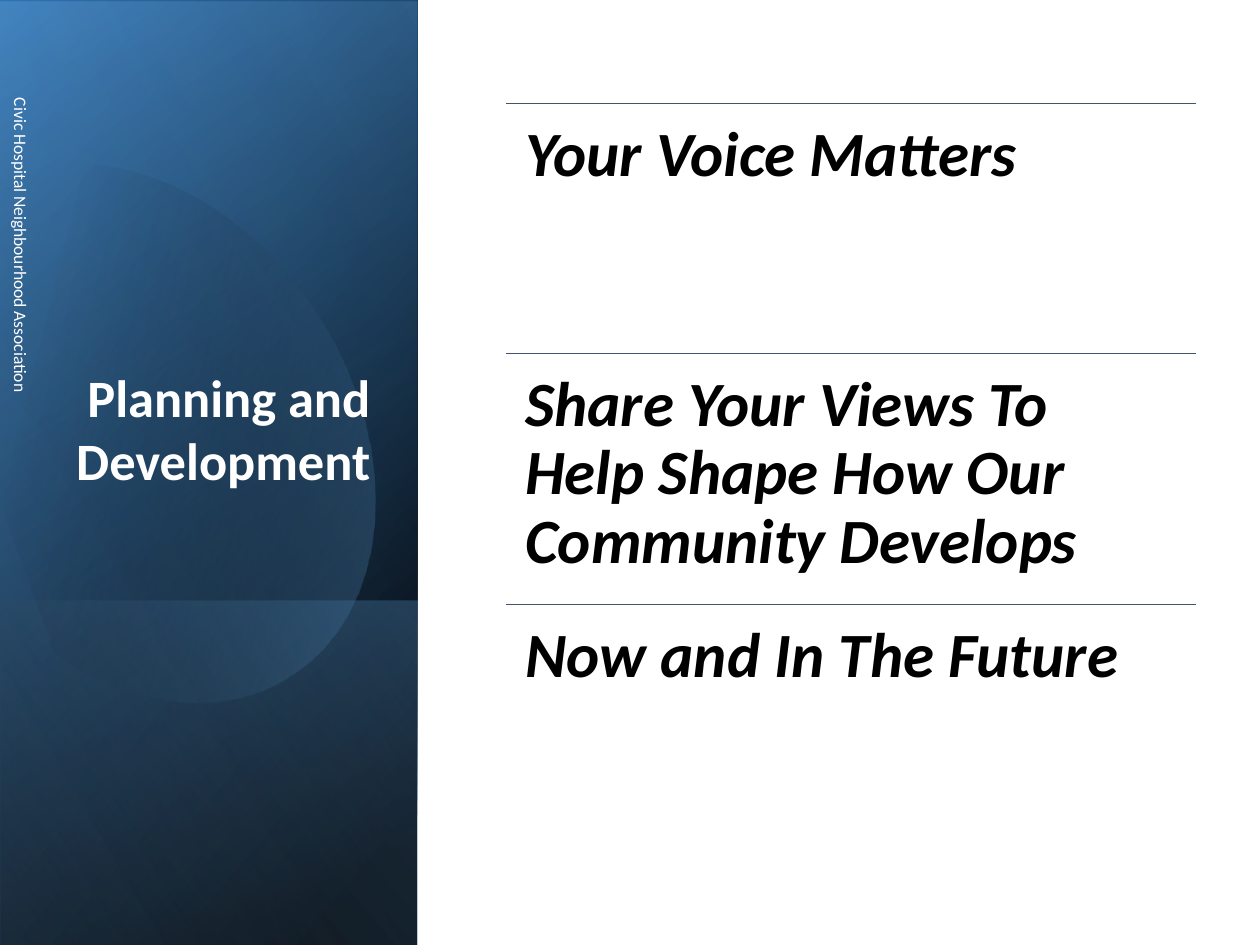
from lxml import etree
from pptx import Presentation
from pptx.dml.color import RGBColor
from pptx.enum.shapes import MSO_CONNECTOR, MSO_SHAPE
from pptx.enum.text import MSO_ANCHOR, MSO_AUTO_SIZE, PP_ALIGN
from pptx.oxml.ns import qn
from pptx.util import Cm, Pt

RECT, STRAIGHT = MSO_SHAPE.RECTANGLE, MSO_CONNECTOR.STRAIGHT
TOP, MIDDLE, BOTTOM = MSO_ANCHOR.TOP, MSO_ANCHOR.MIDDLE, MSO_ANCHOR.BOTTOM
LEFT, RIGHT = PP_ALIGN.LEFT, PP_ALIGN.RIGHT
NO_FIT = MSO_AUTO_SIZE.NONE

COLORS = {"black": "000000", "white": "FFFFFF", "deep": "2E75B6",
          "blue": "5B9BD5", "pale": "9DC3E6", "rule": "44546A"}


def set_gradient(shape, stops, angle):
    shape.shadow.inherit = False
    shape.line.fill.background()
    shape.fill.gradient()
    grad = shape._element.spPr.find(qn("a:gradFill"))
    gs_list = grad.find(qn("a:gsLst"))
    for gs in list(gs_list):
        gs_list.remove(gs)
    for pos, color, alpha in stops:
        gs = etree.SubElement(gs_list, qn("a:gs"), pos=str(pos * 1000))
        clr = etree.SubElement(gs, qn("a:srgbClr"), val=COLORS[color])
        etree.SubElement(clr, qn("a:alpha"), val=str(alpha * 1000))
    grad.find(qn("a:lin")).set("ang", str(angle * 60000))


def set_text(shape, text, insets, anchor, align, spacing, color, font):
    tf = shape.text_frame
    tf.text = text
    frame = dict(zip(("margin_left", "margin_top", "margin_right", "margin_bottom"),
                     (Cm(v) for v in insets)))
    frame.update(word_wrap=True, auto_size=NO_FIT, vertical_anchor=anchor)
    for name, value in frame.items():
        setattr(tf, name, value)
    p = tf.paragraphs[0]
    p.alignment, p.line_spacing = align, spacing
    f = p.runs[0].font
    f.name = "Calibri"
    f.color.rgb = RGBColor.from_string(COLORS[color])
    for name, value in font.items():
        setattr(f, name, value)


prs = Presentation()
prs.slide_width, prs.slide_height = Cm(25.4), Cm(19.05)
s = prs.slides.add_slide(prs.slide_layouts[5])

full = (-5.32, 5.32, 19.05, 8.41)
lower = (0.74, 11.38, 6.96, 8.41)
panels = [
    (full, [(8, "black", 100), (100, "deep", 100)], 50),
    ((-5.32, 5.36, 19.05, 8.41), [(0, "black", 0), (99, "blue", 46)], 30),
    (lower, [(2, "blue", 29), (100, "black", 30)], 130),
    (None, [(29, "black", 0), (100, "blue", 43)], 30),
    (full, [(0, "black", 0), (99, "pale", 11)], 120),
]

start = (2.44, 2.9)
curves = [
    [(4.34, 3.1), (6.2, 4.88), (6.93, 7.37)],
    [(7.8, 10.46), (6.65, 13.49), (4.34, 14.15)],
    [(2.9, 14.58), (1.35, 13.97), (0.18, 12.7)],
    [(-0.08, 12.4)] * 3,
    [(-0.64, 4.22)] * 3,
    [(-0.38, 3.91)] * 3,
    [(0.05, 3.48), (0.56, 3.18), (1.14, 3)],
    [(1.57, 2.87), (2.01, 2.84), start],
]
STEPS = 16
points = [start]
for c1, c2, end in curves:
    origin = points[-1]
    for i in range(1, STEPS + 1):
        t = i / STEPS
        u = 1 - t
        points.append(tuple(
            u**3 * a + 3 * u * u * t * b + 3 * u * t * t * c + t**3 * d
            for a, b, c, d in zip(origin, c1, c2, end)))

for box, stops, angle in panels:
    if box:
        sp = s.shapes.add_shape(RECT, *(Cm(v) for v in box))
        sp.rotation = 90
        sp._element.spPr.xfrm.set("flipH", "1")
    else:
        outline = [(Cm(x), Cm(y)) for x, y in points]
        fb = s.shapes.build_freeform(*outline[0])
        fb.add_line_segments(outline[1:], close=True)
        sp = fb.convert_to_shape()
        sp.rotation = 343.9
    set_gradient(sp, stops, angle)

title = s.shapes.title
s.shapes._spTree.append(title._element)
title.left, title.top, title.width, title.height = Cm(1.22), Cm(4.67), Cm(6.5), Cm(6.65)
set_text(title, "Planning and Development", (0.25, 0.25, 0.25, 1.42), BOTTOM, RIGHT, 1.0,
         "white", {"size": Pt(30), "bold": True})

side = s.shapes.add_textbox(Cm(-3.81), Cm(5.51), Cm(8.59), Cm(1.02))
side.rotation = 90
set_text(side, "Civic Hospital Neighbourhood Association", (0.25, 0.25, 0.25, 0.13), MIDDLE,
         LEFT, 1.0, "white", {"size": Pt(10)})

messages = ["Your Voice Matters",
            "Share Your Views To Help Shape How Our Community Develops",
            "Now and In The Future"]
left, top, width, row = 10.21, 2.08, 13.89, 5.05
for i, message in enumerate(messages):
    y = Cm(top + i * row)
    rule = s.shapes.add_connector(STRAIGHT, Cm(left), y, Cm(left + width), y)
    rule.line.width = Pt(0.5)
    rule.line.color.rgb = RGBColor.from_string(COLORS["rule"])
    etree.SubElement(rule._element.spPr, qn("a:effectLst"))
    tb = s.shapes.add_textbox(Cm(left), y, Cm(width), Cm(row))
    set_text(tb, message, (0.38,) * 4, TOP, LEFT, 0.9, "black",
             {"size": Pt(36), "bold": True, "italic": True})

prs.save("out.pptx")
